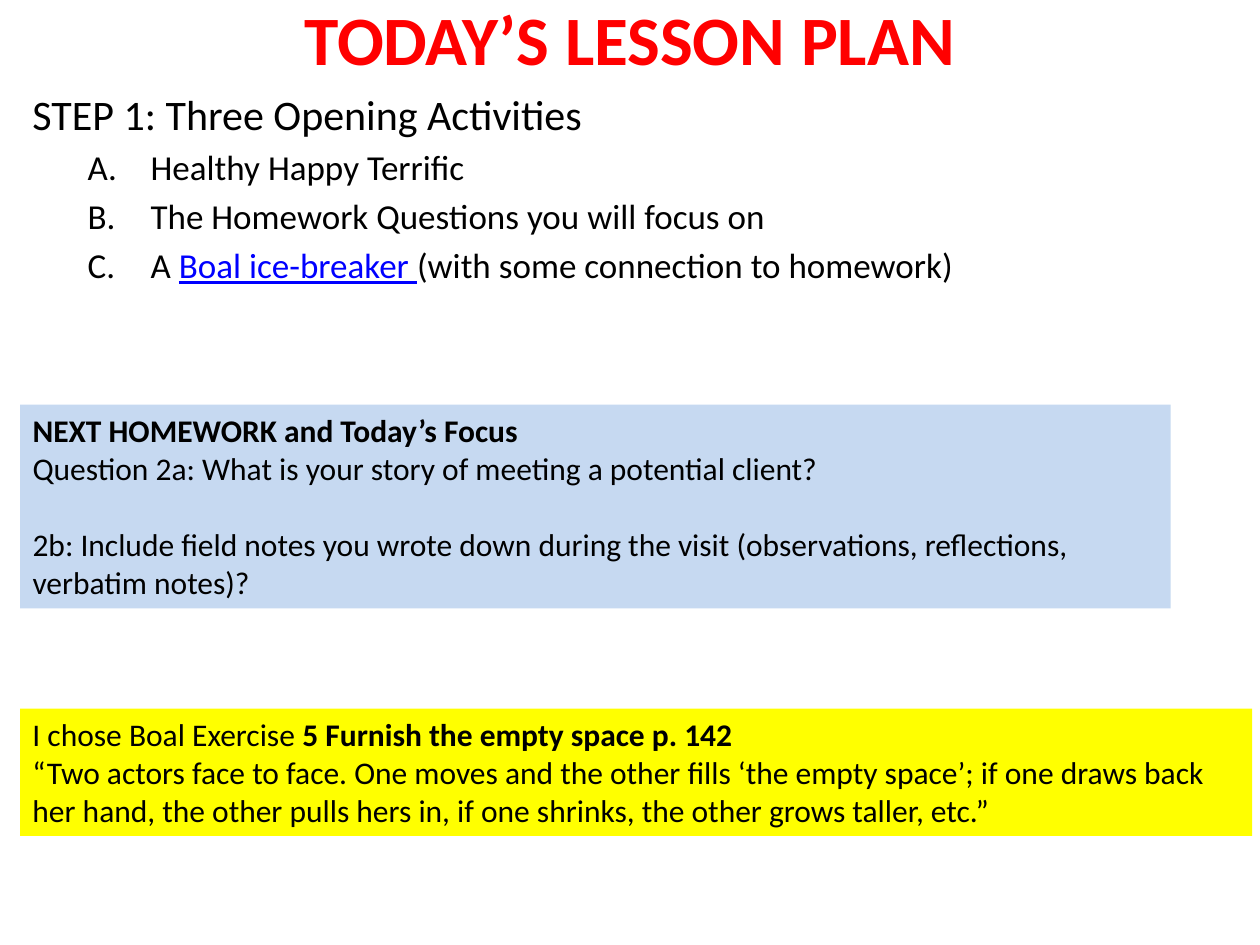
from lxml import etree
from pptx import Presentation
from pptx import util as u
from pptx.dml.color import RGBColor
from pptx.enum import text
from pptx.oxml.ns import qn

COLORS = {"black": "000000", "red": "FF0000", "link": "0000FF",
          "blue": "C6D9F1", "yellow": "FFFF00"}
FONT = "Calibri"

# Content: each paragraph is a list of (wording, style) runs
TITLE = [("TODAY’S LESSON PLAN", {"bold": True, "color": "red"})]
STEP = [("STEP 1: Three Opening Activities", {})]
ACTIVITIES = [
    [("Healthy Happy Terrific", {})],
    [("The Homework Questions you will focus on", {})],
    [("A ", {}),
     ("Boal ice-breaker ", {"color": "link", "underline": True}),
     ("(with some connection to homework)", {})],
]
HOMEWORK = [
    [("NEXT HOMEWORK and Today’s Focus", {"bold": True})],
    [("Question 2a: What is your story of meeting a potential client?", {})],
    [("2b: Include field notes you wrote down during the visit "
      "(observations, reflections, verbatim notes)?", {})],
]
EXERCISE = [
    [("I chose Boal Exercise ", {}),
     ("5 Furnish the empty space p. 142", {"bold": True})],
    [("“Two actors face to face. One moves and the other fills ‘the empty "
      "space’; if one draws back her hand, the other pulls hers in, if one "
      "shrinks, the other grows taller, etc.”", {})],
]
LEFT = 11.5


def rgb(name):
    return RGBColor.from_string(COLORS[name])


def add_box(slide, left, top, width, height, fill=None):
    shape = slide.shapes.add_textbox(*map(u.Pt, (left, top, width, height)))
    shape.text_frame.word_wrap = True
    if fill:
        shape.fill.solid()
        shape.fill.fore_color.rgb = rgb(fill)
        shape.text_frame.auto_size = text.MSO_AUTO_SIZE.SHAPE_TO_FIT_TEXT
    return shape.text_frame


def add_paragraph(frame, runs, size, before=0):
    paragraph = frame.paragraphs[0]
    if paragraph.runs:
        paragraph = frame.add_paragraph()
    paragraph.space_before = u.Pt(before)
    for wording, style in runs:
        run = paragraph.add_run()
        run.text = wording
        run.font.name = FONT
        run.font.size = u.Pt(size)
        run.font.bold = style.get("bold", False)
        run.font.underline = style.get("underline", False)
        run.font.color.rgb = rgb(style.get("color", "black"))
    return paragraph


def add_letter(paragraph):
    properties = paragraph._p.get_or_add_pPr()
    properties.set("marL", str(u.Pt(67.5)))
    properties.set("indent", str(u.Pt(-36)))
    bullet = etree.SubElement(properties, qn("a:buAutoNum"))
    bullet.set("type", "alphaUcPeriod")


def main():
    presentation = Presentation()
    presentation.slide_width, presentation.slide_height = u.Pt(720), u.Pt(540)
    slide = presentation.slides.add_slide(presentation.slide_layouts[6])

    # Title
    frame = add_box(slide, 36, 8.5, 648, 26)
    frame.vertical_anchor = text.MSO_ANCHOR.MIDDLE
    add_paragraph(frame, TITLE, 39.6).alignment = text.PP_ALIGN.CENTER

    # Opening activities, lettered
    frame = add_box(slide, LEFT, 47, 695, 155.5)
    add_paragraph(frame, STEP, 24, before=4.8)
    for runs in ACTIVITIES:
        paragraph = add_paragraph(frame, runs, 20, before=4)
        paragraph.level = 1
        add_letter(paragraph)

    # Homework panel, with a one-line gap before the last question
    frame = add_box(slide, LEFT, 231.25, 657.5, 116.5, "blue")
    for runs, before in zip(HOMEWORK, (0, 0, 22)):
        add_paragraph(frame, runs, 18, before)

    # Exercise panel
    frame = add_box(slide, LEFT, 405, 704, 72.75, "yellow")
    for runs in EXERCISE:
        add_paragraph(frame, runs, 18)

    presentation.save("out.pptx")


if __name__ == "__main__":
    main()
